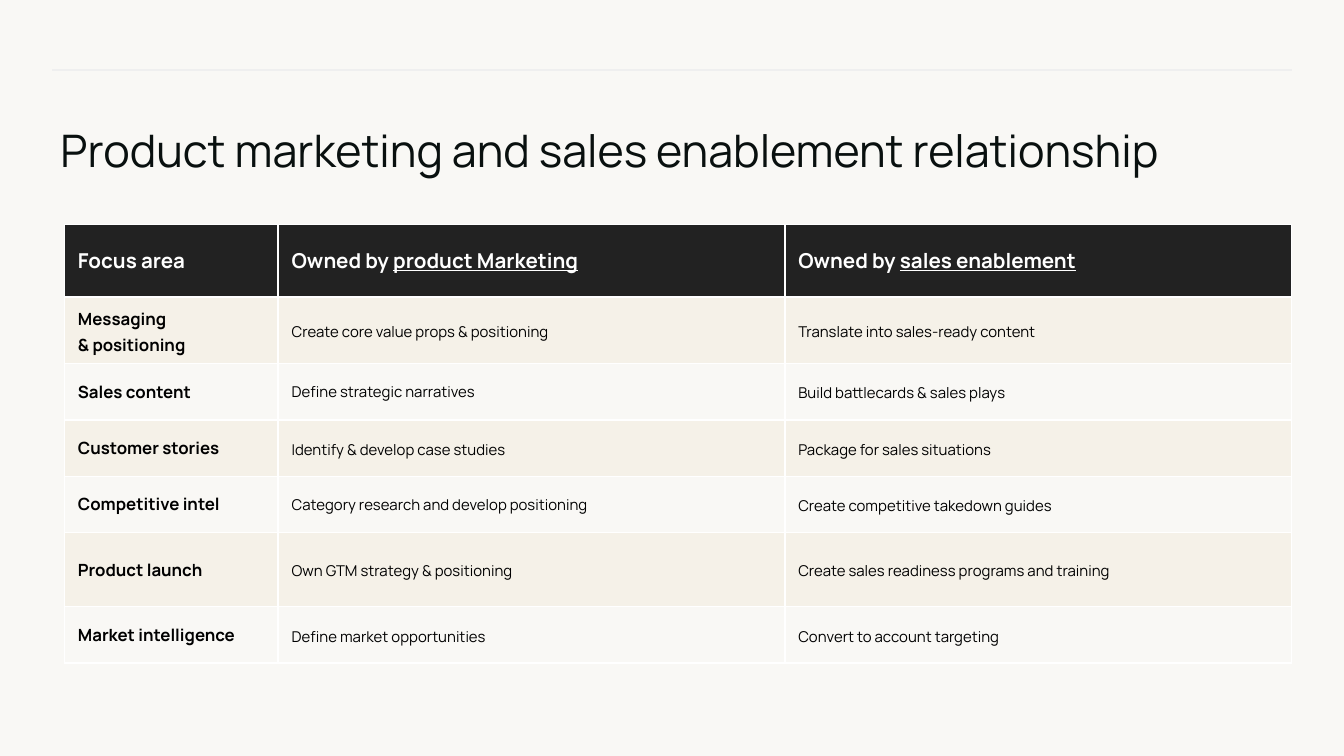
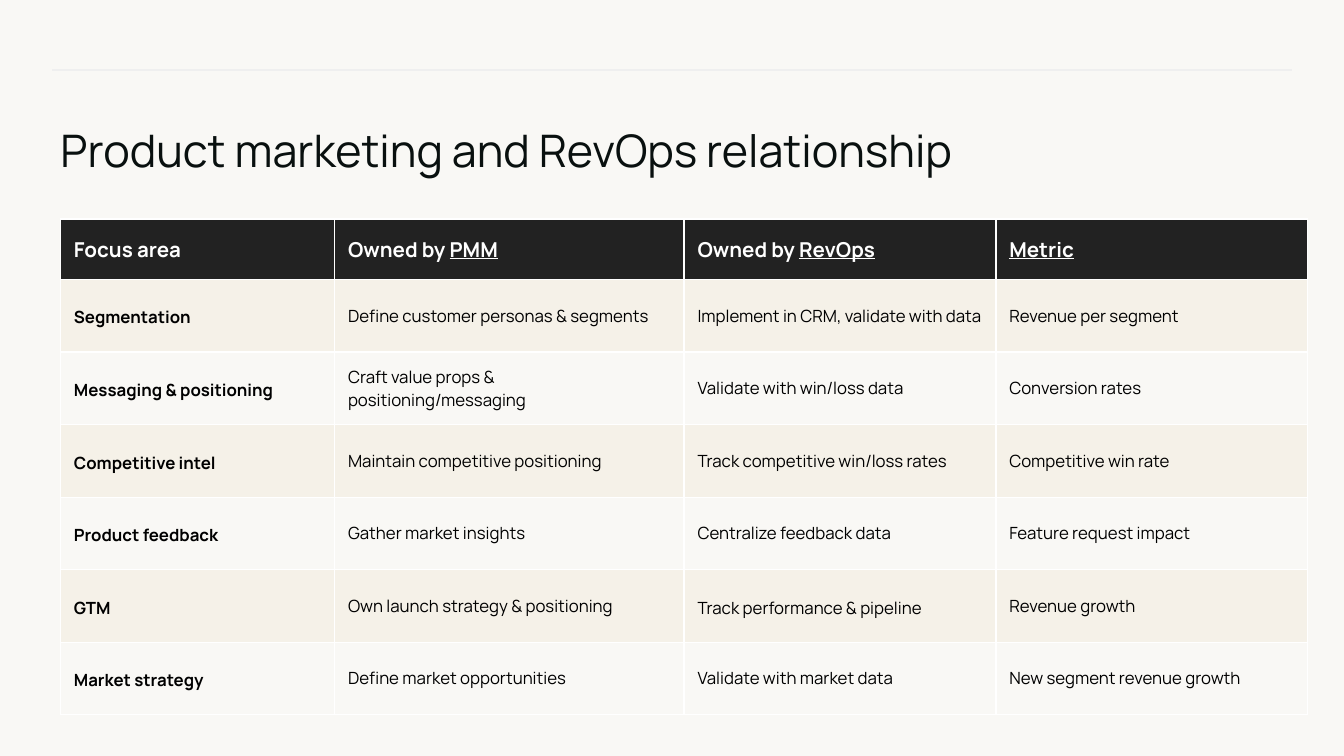
from lxml import etree
from pptx import Presentation, util as u
from pptx.dml.color import RGBColor
from pptx.enum import shapes, text
from pptx.oxml import ns

WIDE = 10
HIGH = WIDE * 9 / 16
FONT = "Manrope"
COLORS = {"page": "F9F8F5", "rule": "EFEFEF", "title": "09100F", "head": "222222",
          "band": "F5F1E8", "edge": "FFFFFF", "white": "FFFFFF", "black": "000000"}

SALES = [
    ["Focus area", "Owned by |product Marketing", "Owned by |sales enablement"],
    ["Messaging \n& positioning", "Create core value props & positioning",
     "Translate into sales-ready content"],
    ["Sales content", "Define strategic narratives", "Build battlecards & sales plays"],
    ["Customer stories", "Identify & develop case studies", "Package for sales situations"],
    ["Competitive intel", "Category research and develop positioning",
     "Create competitive takedown guides"],
    ["Product launch", "Own GTM strategy & positioning",
     "Create sales readiness programs and training"],
    ["Market intelligence", "Define market opportunities", "Convert to account targeting"],
]
REVOPS = [
    ["Focus area", "Owned by |PMM", "Owned by |RevOps", "|Metric"],
    ["Segmentation", "Define customer personas & segments",
     "Implement in CRM, validate with data", "Revenue per segment"],
    ["Messaging & positioning", "Craft value props & positioning/messaging",
     "Validate with win/loss data", "Conversion rates"],
    ["Competitive intel", "Maintain competitive positioning",
     "Track competitive win/loss rates", "Competitive win rate"],
    ["Product feedback", "Gather market insights", "Centralize feedback data",
     "Feature request impact"],
    ["GTM", "Own launch strategy & positioning", "Track performance & pipeline",
     "Revenue growth"],
    ["Market strategy", "Define market opportunities", "Validate with market data",
     "New segment revenue growth"],
]


def rgb(name):
    return RGBColor.from_string(COLORS[name])


def write(frame, words, size, color, bold=False, space=None, after=None):
    """Fill the first paragraph; words after a bar are underlined."""
    para = frame.paragraphs[0]
    para.alignment = text.PP_ALIGN.LEFT
    if space:
        para.line_spacing = space
    if after:
        para.space_after = u.Pt(after)
    for part, chunk in enumerate(words.split("|")):
        for row, line in enumerate(chunk.split("\n")):
            if row:
                para.add_line_break()
            if not line:
                continue
            run = para.add_run()
            run.text = line
            font = run.font
            font.name, font.size, font.bold = FONT, u.Pt(size), bold
            font.color.rgb = rgb(color)
            if part:
                font.underline = True


def add_rule(slide):
    left, right, top = u.Inches(0.39), u.Inches(WIDE - 0.39), u.Inches(0.52)
    rule = slide.shapes.add_connector(shapes.MSO_CONNECTOR.STRAIGHT, right, top, left, top)
    rule.line.color.rgb = rgb("rule")
    rule.line.width = u.Pt(0.75)
    etree.SubElement(rule.element.spPr, ns.qn("a:effectLst"))


def add_title(slide, words, width):
    title = slide.shapes.title
    title.left, title.top = u.Inches(0.45), u.Inches(0.91)
    title.width, title.height = u.Inches(width), u.Inches(0.51)
    frame = title.text_frame
    frame.margin_left = frame.margin_top = frame.margin_right = frame.margin_bottom = 0
    frame.vertical_anchor = text.MSO_ANCHOR.TOP
    frame.auto_size = text.MSO_AUTO_SIZE.NONE
    frame.word_wrap = True
    write(frame, words, 24, "title", after=10)


def add_edges(cell, top):
    """Border a cell; the schema wants the lines ahead of the fill."""
    props = cell._tc.get_or_add_tcPr()
    for spot, (side, width) in enumerate((("L", 1), ("R", 1), ("T", top), ("B", 0.75))):
        line = etree.Element(ns.qn("a:ln" + side), w=str(u.Pt(width)))
        fill = etree.SubElement(line, ns.qn("a:solidFill"))
        etree.SubElement(fill, ns.qn("a:srgbClr"), val=COLORS["edge"])
        props.insert(spot, line)


def add_cell(cell, words, row, **form):
    head = row == 0
    cell.vertical_anchor = text.MSO_ANCHOR.MIDDLE
    cell.margin_left = cell.margin_right = u.Inches(0.1)
    cell.margin_top = cell.margin_bottom = u.Inches(0.1 if head else 0.05)
    cell.fill.solid()
    cell.fill.fore_color.rgb = rgb("head" if head else "band" if row % 2 else "page")
    add_edges(cell, 1 if head else 0.75)
    write(cell.text_frame, words, **form)


def add_grid(slide, data, left, top, cols, rows, size, loose, odd):
    """Draw a table; loose columns have wide line spacing, odd cells swap it."""
    spots = [u.Inches(n) for n in (left, top, sum(cols), sum(rows))]
    grid = slide.shapes.add_table(len(rows), len(cols), *spots).table
    for col, width in zip(grid.columns, cols):
        col.width = u.Inches(width)
    for row, height in zip(grid.rows, rows):
        row.height = u.Inches(height)
    for r, line in enumerate(data):
        for c, words in enumerate(line):
            cell = grid.cell(r, c)
            if r == 0:
                add_cell(cell, words, r, size=11, color="white", bold=True)
            else:
                wide = (c in loose) != ((r, c) in odd)
                add_cell(cell, words, r, size=size if c else 9, color="black",
                         bold=c == 0, space=1.15 if wide else None)


def add_page(deck, title, width, **grid):
    slide = deck.slides.add_slide(deck.slide_layouts[5])
    add_rule(slide)
    add_title(slide, title, width)
    add_grid(slide, **grid)


def main():
    deck = Presentation()
    deck.slide_width, deck.slide_height = u.Inches(WIDE), u.Inches(HIGH)
    back = deck.slide_master.background.fill
    back.solid()
    back.fore_color.rgb = rgb("page")
    add_page(deck, "Product marketing and sales enablement relationship", 9.23,
             data=SALES, left=0.48, top=1.67, cols=[1.59, 3.77, 3.77],
             rows=[0.54, 0.48, 0.42, 0.42, 0.42, 0.55, 0.42], size=8,
             loose={1, 2}, odd={(1, 0), (2, 1), (4, 1)})
    add_page(deck, "Product marketing and RevOps relationship", 9.4,
             data=REVOPS, left=0.45, top=1.63, cols=[2.04, 2.6, 2.32, 2.32],
             rows=[0.45] + [0.54] * 6, size=9, loose={0}, odd={(5, 2)})
    deck.save("out.pptx")


if __name__ == "__main__":
    main()
